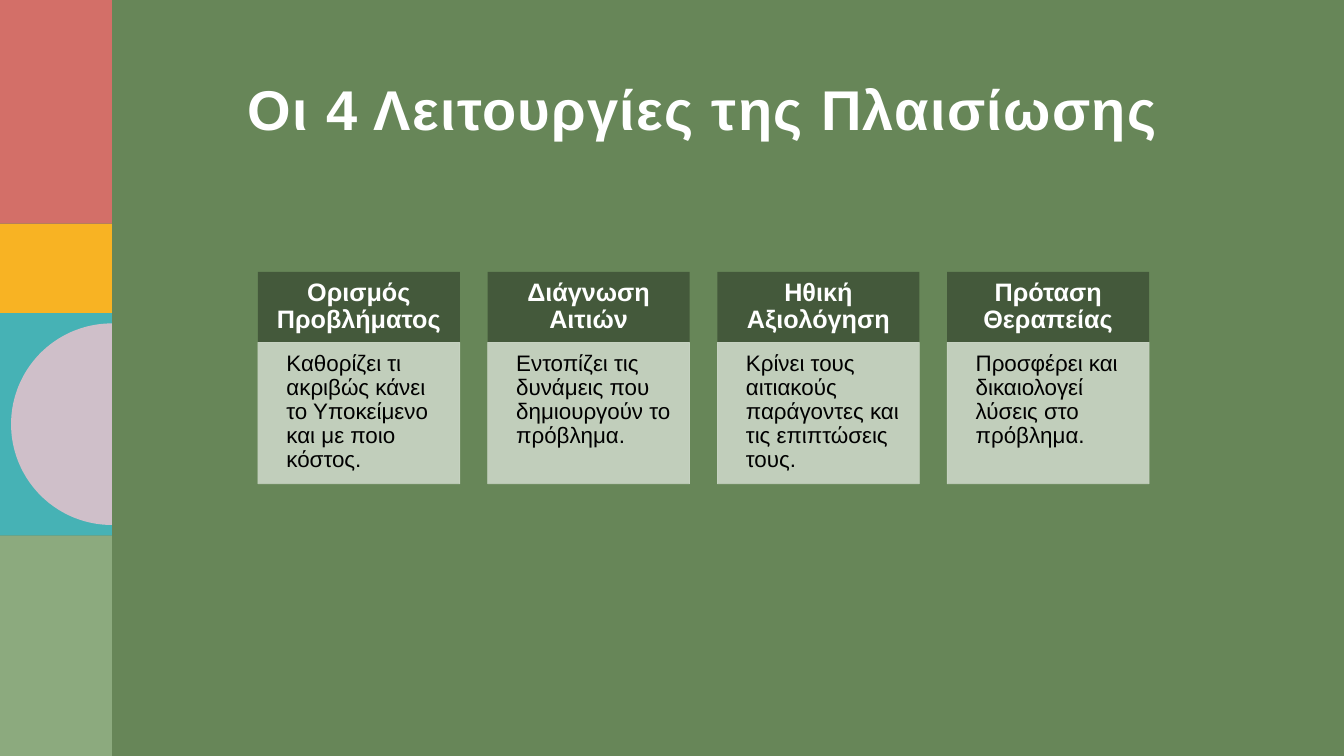
import math
from lxml import etree
from pptx import Presentation, util as u
from pptx.dml.color import RGBColor
from pptx.enum import shapes, text
from pptx.oxml.ns import qn

COLORS = {
    "back": "678658", "rose": "D36F68", "gold": "F8B323", "teal": "46B2B5",
    "sage": "8CAA7E", "mauve": "CFBFC9", "head": "44593B", "body": "CBD6C6",
    "white": "FFFFFF", "black": "000000",
}
CARDS = [
    ("Ορισμός Προβλήματος", "Καθορίζει τι ακριβώς κάνει το Υποκείμενο και με ποιο κόστος."),
    ("Διάγνωση Αιτιών", "Εντοπίζει τις δυνάμεις που δημιουργούν το πρόβλημα."),
    ("Ηθική Αξιολόγηση", "Κρίνει τους αιτιακούς παράγοντες και τις επιπτώσεις τους."),
    ("Πρόταση Θεραπείας", "Προσφέρει και δικαιολογεί λύσεις στο πρόβλημα."),
]


class Painter:
    font = "Arial"
    leading = 0.9

    def __init__(self, slide):
        self.slide = slide
        self.tint(slide.background, "back")

    def tint(self, item, color):
        item.fill.solid()
        item.fill.fore_color.rgb = RGBColor.from_string(COLORS[color])

    def rect(self, box, color, alpha=None):
        shape = self.slide.shapes.add_shape(
            shapes.MSO_SHAPE.RECTANGLE, *map(u.Cm, box))
        shape.shadow.inherit = False
        self.tint(shape, color)
        if alpha:
            self.tint(shape.line, color)
            shape.line.width = u.Pt(0.5)
            for node in shape.element.spPr.iter(qn("a:srgbClr")):
                etree.SubElement(node, qn("a:alpha")).set("val", str(alpha * 1000))
        else:
            shape.line.fill.background()
        return shape

    def half(self, x, y, r, color, steps=90):
        turns = [math.pi * (0.5 + i / steps) for i in range(steps + 1)]
        dots = [(u.Cm(x + r * math.cos(t)), u.Cm(y - r * math.sin(t))) for t in turns]
        form = self.slide.shapes.build_freeform(*dots[0])
        form.add_line_segments(dots[1:])
        shape = form.convert_to_shape()
        shape.shadow.inherit = False
        self.tint(shape, color)
        shape.line.fill.background()

    def label(self, shape, words, size, color, insets, bold=False,
              align=text.PP_ALIGN.LEFT, anchor=text.MSO_ANCHOR.TOP):
        frame = shape.text_frame
        frame.word_wrap = True
        frame.vertical_anchor = anchor
        (frame.margin_left, frame.margin_top,
         frame.margin_right, frame.margin_bottom) = map(u.Cm, insets)
        frame.text = words
        para = frame.paragraphs[0]
        para.alignment = align
        para.line_spacing = self.leading
        font = para.runs[0].font
        font.name, font.size, font.bold = self.font, u.Pt(size), bold
        font.color.rgb = RGBColor.from_string(COLORS[color])

    def title(self, words, box):
        shape = self.slide.shapes.add_textbox(*map(u.Cm, box))
        self.label(shape, words, 40, "white", (0, 0, 0, 0), bold=True)
        for node in shape.element.iter(qn("a:rPr")):
            node.set("spc", "100")

    def card(self, x, y, wide, head, body):
        tall = 1.78
        shape = self.rect((x, y, wide, tall), "head")
        self.label(shape, head, 18, "white", (0.36, 0.2, 0.36, 0.2), bold=True,
                   align=text.PP_ALIGN.CENTER, anchor=text.MSO_ANCHOR.MIDDLE)
        shape = self.rect((x, y + tall, wide, 2 * tall), "body", alpha=90)
        self.label(shape, body, 16, "black", (0.72, 0.24, 0.3, 0.36))


def main():
    deck = Presentation()
    deck.slide_width, deck.slide_height = u.Cm(33.87), u.Cm(19.05)
    pen = Painter(deck.slides.add_slide(deck.slide_layouts[6]))

    side = 2.82
    edges = [0, 5.64, 7.89, 13.5, 19.05]
    for color, top, end in zip(("rose", "gold", "teal", "sage"), edges, edges[1:]):
        pen.rect((0, top, side, end - top), color)
    pen.half(side, 10.69, 2.54, "mauve")

    pen.title("Οι 4 Λειτουργίες της Πλαισίωσης", (6.25, 2.06, 25.1, 2.18))
    for i, (head, body) in enumerate(CARDS):
        pen.card(6.5 + 5.79 * i, 6.85, 5.09, head, body)
    deck.save("out.pptx")


if __name__ == "__main__":
    main()
